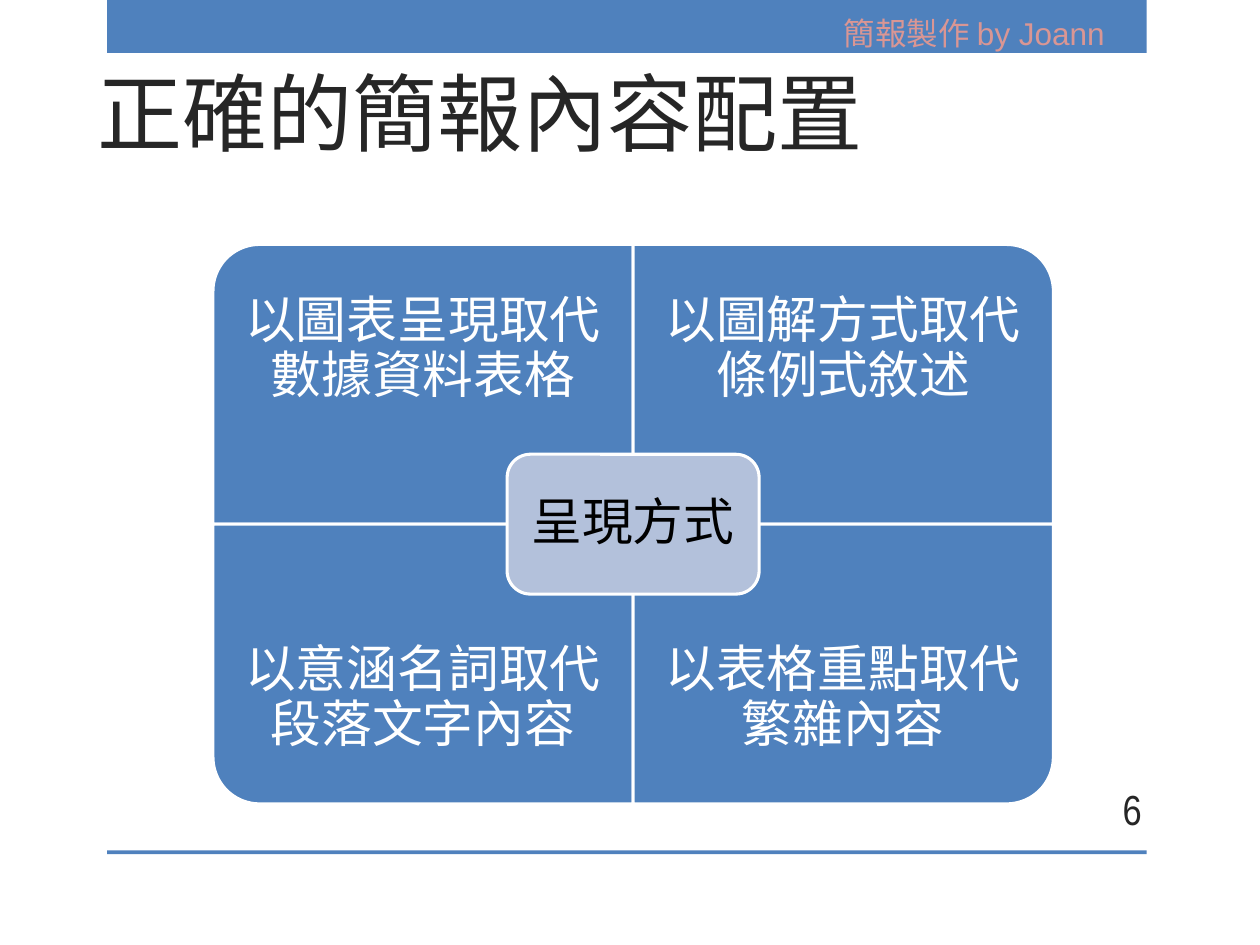
from pptx import Presentation
from pptx.dml.color import RGBColor
from pptx.enum.shapes import MSO_SHAPE
from pptx.enum.text import MSO_ANCHOR, MSO_AUTO_SIZE, PP_ALIGN
from pptx.util import Inches, Pt

# Content
TITLE = "正確的簡報內容配置"
AUTHOR = "簡報製作 by Joann"
PAGE_NUMBER = "6"
CENTER_LABEL = "呈現方式"
# text, column, row, rotation that turns the round corner outwards
QUADRANTS = [
    ("以圖表呈現取代數據資料表格", 0, 0, 270),
    ("以圖解方式取代條例式敘述", 1, 0, 0),
    ("以意涵名詞取代段落文字內容", 0, 1, 180),
    ("以表格重點取代繁雜內容", 1, 1, 90),
]

COLORS = {"blue": "4F81BD", "pale": "B3C1DB", "white": "FFFFFF",
          "black": "000000", "dark": "262626", "pink": "D99694"}

# Matrix geometry in inches
LEFT, TOP = 1.69, 1.94
CELL_WIDTH, CELL_HEIGHT = 3.335, 2.22
TEXT_HEIGHT = 1.67
CENTER_WIDTH, CENTER_HEIGHT = 2, 1.11


def color(name):
    return RGBColor.from_string(COLORS[name])


def add_box(slide, kind, left, top, width, height, fill, outlined=False):
    shape = slide.shapes.add_shape(kind, Inches(left), Inches(top),
                                   Inches(width), Inches(height))
    shape.shadow.inherit = False
    shape.fill.solid()
    shape.fill.fore_color.rgb = color(fill)
    if outlined:
        shape.line.color.rgb = color("white")
        shape.line.width = Pt(1.75)
    else:
        shape.line.fill.background()
    return shape


def add_text_box(slide, left, top, width, height):
    return slide.shapes.add_textbox(Inches(left), Inches(top),
                                    Inches(width), Inches(height))


def write(shape, text, font_name, size, font_color, align=PP_ALIGN.LEFT,
          anchor=MSO_ANCHOR.TOP):
    frame = shape.text_frame
    frame.text = text
    frame.word_wrap = True
    frame.auto_size = MSO_AUTO_SIZE.NONE
    frame.vertical_anchor = anchor
    paragraph = frame.paragraphs[0]
    paragraph.alignment = align
    font = paragraph.runs[0].font
    font.name, font.size = font_name, Pt(size)
    font.color.rgb = color(font_color)


def write_label(shape, text, font_color, inset):
    write(shape, text, "Times New Roman", 29, font_color,
          PP_ALIGN.CENTER, MSO_ANCHOR.MIDDLE)
    frame = shape.text_frame
    frame.margin_left = frame.margin_right = Inches(inset)
    frame.margin_top = frame.margin_bottom = Inches(inset)
    frame.paragraphs[0].line_spacing = 0.9
    frame.paragraphs[0].space_after = Pt(10)


def add_quadrant(slide, text, column, row, rotation):
    left, top = LEFT + column * CELL_WIDTH, TOP + row * CELL_HEIGHT
    # A quarter turn swaps width and height about the same centre
    width, height = CELL_WIDTH, CELL_HEIGHT
    if rotation % 180:
        width, height = height, width
    shape = add_box(slide, MSO_SHAPE.ROUND_1_RECTANGLE,
                    left + (CELL_WIDTH - width) / 2,
                    top + (CELL_HEIGHT - height) / 2,
                    width, height, "blue", outlined=True)
    shape.rotation = rotation
    # The text keeps to the outer part of the cell
    text_top = top + row * (CELL_HEIGHT - TEXT_HEIGHT)
    label = add_text_box(slide, left, text_top, CELL_WIDTH, TEXT_HEIGHT)
    write_label(label, text, "white", 0.23)


def main():
    presentation = Presentation()
    presentation.slide_width, presentation.slide_height = Inches(10), Inches(7.5)
    slide = presentation.slides.add_slide(presentation.slide_layouts[5])

    # Header band, footer rule and author
    for top, height in [(0, 0.42), (6.75, 0.03)]:
        add_box(slide, MSO_SHAPE.RECTANGLE, 0.85, top, 8.25, height, "blue")
    write(add_text_box(slide, 6.6, 0.06, 2.5, 0.4), AUTHOR, "Arial", 18, "pink")

    # Title and page number
    title = slide.shapes.title
    title.left, title.top = Inches(0.67), Inches(0.6)
    title.width, title.height = Inches(7.68), Inches(0.74)
    write(title, TITLE, "Arial Narrow", 48.6, "dark", anchor=MSO_ANCHOR.BOTTOM)
    write(add_text_box(slide, 8.33, 6.22, 0.83, 0.4), PAGE_NUMBER,
          "Arial Narrow", 24, "dark", PP_ALIGN.RIGHT, MSO_ANCHOR.MIDDLE)

    # Matrix with its centre label
    for quadrant in QUADRANTS:
        add_quadrant(slide, *quadrant)
    center = add_box(slide, MSO_SHAPE.ROUNDED_RECTANGLE,
                     LEFT + CELL_WIDTH - CENTER_WIDTH / 2,
                     TOP + CELL_HEIGHT - CENTER_HEIGHT / 2,
                     CENTER_WIDTH, CENTER_HEIGHT, "pale", outlined=True)
    write_label(center, CENTER_LABEL, "black", 0.12)

    presentation.save("out.pptx")


if __name__ == "__main__":
    main()
